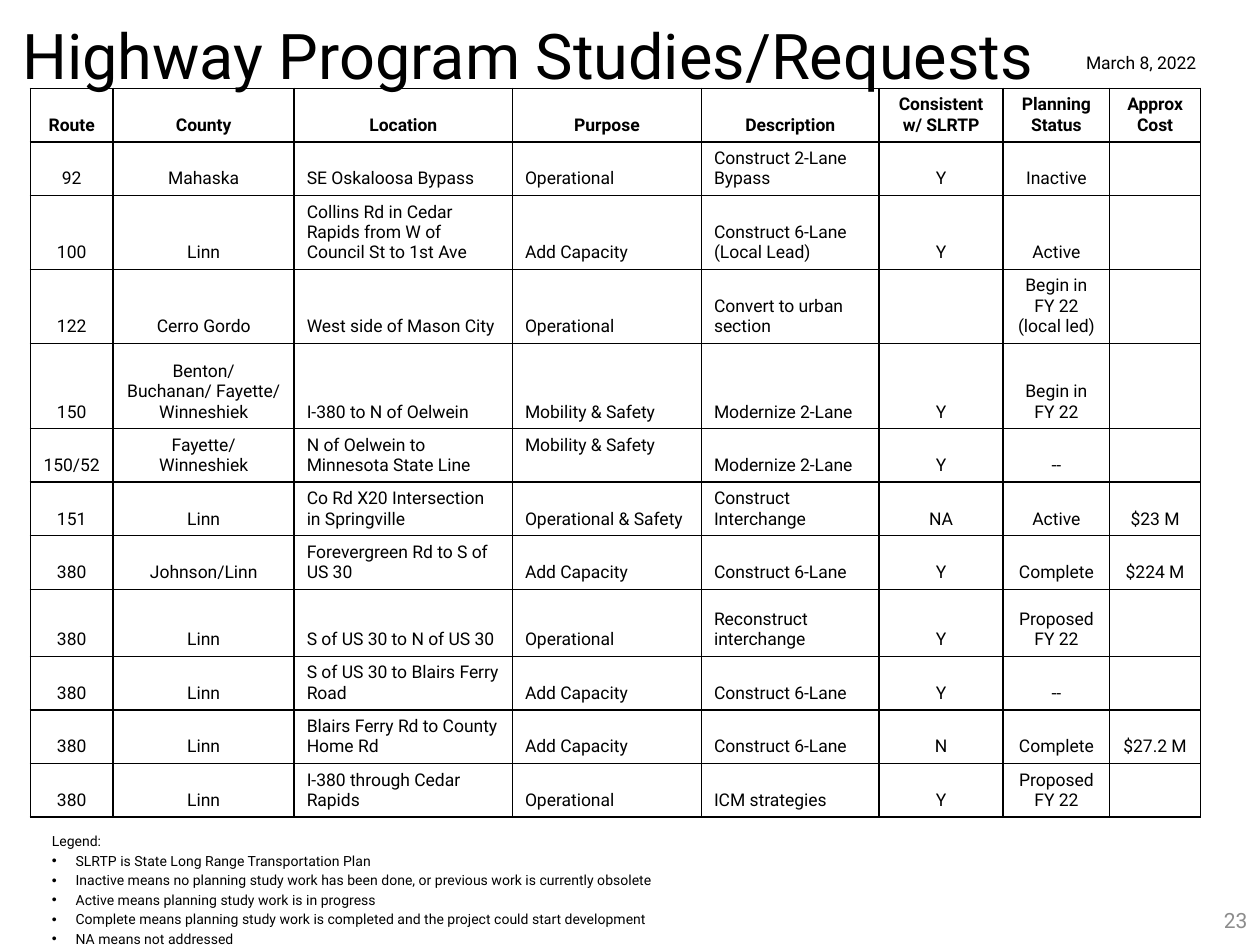
from lxml.etree import SubElement
from pptx import Presentation
from pptx.dml.color import RGBColor
from pptx.enum.text import MSO_ANCHOR, MSO_AUTO_SIZE, PP_ALIGN
from pptx.oxml.ns import qn
from pptx.util import Cm, Pt

LEFT, MID, RIGHT = PP_ALIGN.LEFT, PP_ALIGN.CENTER, PP_ALIGN.RIGHT
WIDTHS = [1.67, 3.65, 4.4, 3.81, 3.58, 2.5, 2.15, 1.83]
TWO, THREE = 1.08, 1.49  # row heights for two and three lines of text
HEIGHTS = [TWO, TWO, THREE, THREE, 1.72, TWO, TWO, TWO, 1.35, TWO, TWO, TWO]
ALIGNS = [MID, MID, LEFT, LEFT, LEFT, MID, MID, MID]
ROWS = [
    ["Route", "County", "Location", "Purpose", "Description",
     "Consistent\nw/ SLRTP", "Planning Status", "Approx Cost"],
    ["92", "Mahaska", "SE Oskaloosa Bypass", "Operational",
     "Construct 2-Lane Bypass", "Y", "Inactive", ""],
    ["100", "Linn", "Collins Rd in Cedar Rapids from W of Council St to 1st Ave",
     "Add Capacity", "Construct 6-Lane\n(Local Lead)", "Y", "Active", ""],
    ["122", "Cerro Gordo", "West side of Mason City", "Operational",
     "Convert to urban section", "", "Begin in FY 22 (local led)", ""],
    ["150", "Benton/\nBuchanan/ Fayette/\nWinneshiek", "I-380 to N of Oelwein",
     "Mobility & Safety", "Modernize 2-Lane", "Y", "Begin in FY 22", ""],
    ["150/52", "Fayette/\nWinneshiek", "N of Oelwein to Minnesota State Line",
     "Mobility & Safety", "Modernize 2-Lane", "Y", "--", ""],
    ["151", "Linn", "Co Rd X20 Intersection in Springville",
     "Operational & Safety", "Construct Interchange", "NA", "Active", "$23 M"],
    ["380", "Johnson/Linn", "Forevergreen Rd to S of US 30", "Add Capacity",
     "Construct 6-Lane", "Y", "Complete", "$224 M"],
    ["380", "Linn", "S of US 30 to N of US 30", "Operational",
     "Reconstruct interchange", "Y", "Proposed FY 22", ""],
    ["380", "Linn", "S of US 30 to Blairs Ferry Road", "Add Capacity",
     "Construct 6-Lane", "Y", "--", ""],
    ["380", "Linn", "Blairs Ferry Rd to County Home Rd", "Add Capacity",
     "Construct 6-Lane", "N", "Complete", "$27.2 M"],
    ["380", "Linn", "I-380 through Cedar Rapids", "Operational",
     "ICM strategies", "Y", "Proposed FY 22", ""],
]
RAISED = (5, 3)  # the one cell whose text sits at the top
LEGEND = [
    "Legend:",
    "SLRTP is State Long Range Transportation Plan",
    "Inactive means no planning study work has been done, "
    "or previous work is currently obsolete",
    "Active means planning study work is in progress",
    "Complete means planning study work is completed "
    "and the project could start development",
    "NA means not addressed",
]


def color(code):
    return RGBColor.from_string(code)


def write(frame, text, size=10, ink="000000", bold=False, align=LEFT,
          before=0, line=None):
    """Fill a text frame, one paragraph for each line of text."""
    frame.text = text
    for par in frame.paragraphs:
        par.alignment = align
        par.space_before = Pt(before)
        par.line_spacing = line
        for run in par.runs:
            font = run.font
            font.name, font.size, font.bold = "Roboto", Pt(size), bold
            font.color.rgb = color(ink)


def place(shape, box):
    shape.left, shape.top, shape.width, shape.height = map(Cm, box)


def add_title(slide, box):
    title = slide.shapes.title
    place(title, box)
    frame = title.text_frame
    frame.auto_size = MSO_AUTO_SIZE.NONE
    frame.vertical_anchor = MSO_ANCHOR.MIDDLE
    write(frame, "Highway Program Studies/Requests", size=36, align=MID,
          line=0.85)


def add_label(slide, box, text, wrap=True, **form):
    frame = slide.shapes.add_textbox(*map(Cm, box)).text_frame
    frame.word_wrap = wrap
    frame.vertical_anchor = MSO_ANCHOR.MIDDLE
    write(frame, text, **form)


def rule_cell(cell):
    """Draw black lines on all four sides of a cell without fill."""
    props = cell._tc.get_or_add_tcPr()
    for side in ("lnL", "lnR", "lnT", "lnB"):
        edge = SubElement(props, qn(f"a:{side}"), w=str(Pt(1)))
        fill = SubElement(edge, qn("a:solidFill"))
        SubElement(fill, qn("a:srgbClr"), val="000000")
    cell.fill.background()


def add_studies(slide, left, top):
    box = map(Cm, (left, top, sum(WIDTHS), sum(HEIGHTS)))
    table = slide.shapes.add_table(len(ROWS), len(WIDTHS), *box).table
    table.horz_banding = False
    for col, width in zip(table.columns, WIDTHS):
        col.width = Cm(width)
    for r, texts in enumerate(ROWS):
        table.rows[r].height = Cm(HEIGHTS[r])
        for c, text in enumerate(texts):
            cell = table.cell(r, c)
            rule_cell(cell)
            raised = (r, c) == RAISED
            cell.vertical_anchor = MSO_ANCHOR.TOP if raised else MSO_ANCHOR.BOTTOM
            write(cell.text_frame, text, bold=r == 0,
                  align=ALIGNS[c] if r else MID)


def add_legend(slide, box):
    body = slide.placeholders[1]
    place(body, box)
    frame = body.text_frame
    frame.auto_size = MSO_AUTO_SIZE.NONE
    write(frame, "\n".join(LEGEND), size=8, before=1.6)
    for i, par in enumerate(frame.paragraphs):
        props = par._p.get_or_add_pPr()
        hang = Cm(0.48) if i else 0
        props.set("marL", str(hang))
        props.set("indent", str(-hang))
        if i:
            SubElement(props, qn("a:buChar"), char="•")
        else:
            SubElement(props, qn("a:buNone"))


def main():
    deck = Presentation()
    deck.slide_width, deck.slide_height = Cm(25.4), Cm(19.05)
    slide = deck.slides.add_slide(deck.slide_layouts[1])
    add_title(slide, (-2.06, 0, 25.4, 2.41))
    add_studies(slide, 0.61, 1.78)
    add_label(slide, (19.48, 18.03, 5.92, 1.02), "23", size=12, ink="8C8C8C",
              align=RIGHT)
    add_legend(slide, (0.79, 16.66, 12.83, 2.64))
    add_label(slide, (21.62, 0.91, 2.77, 0.69), "March 8, 2022", wrap=False,
              align=MID)
    deck.save("out.pptx")


if __name__ == "__main__":
    main()
